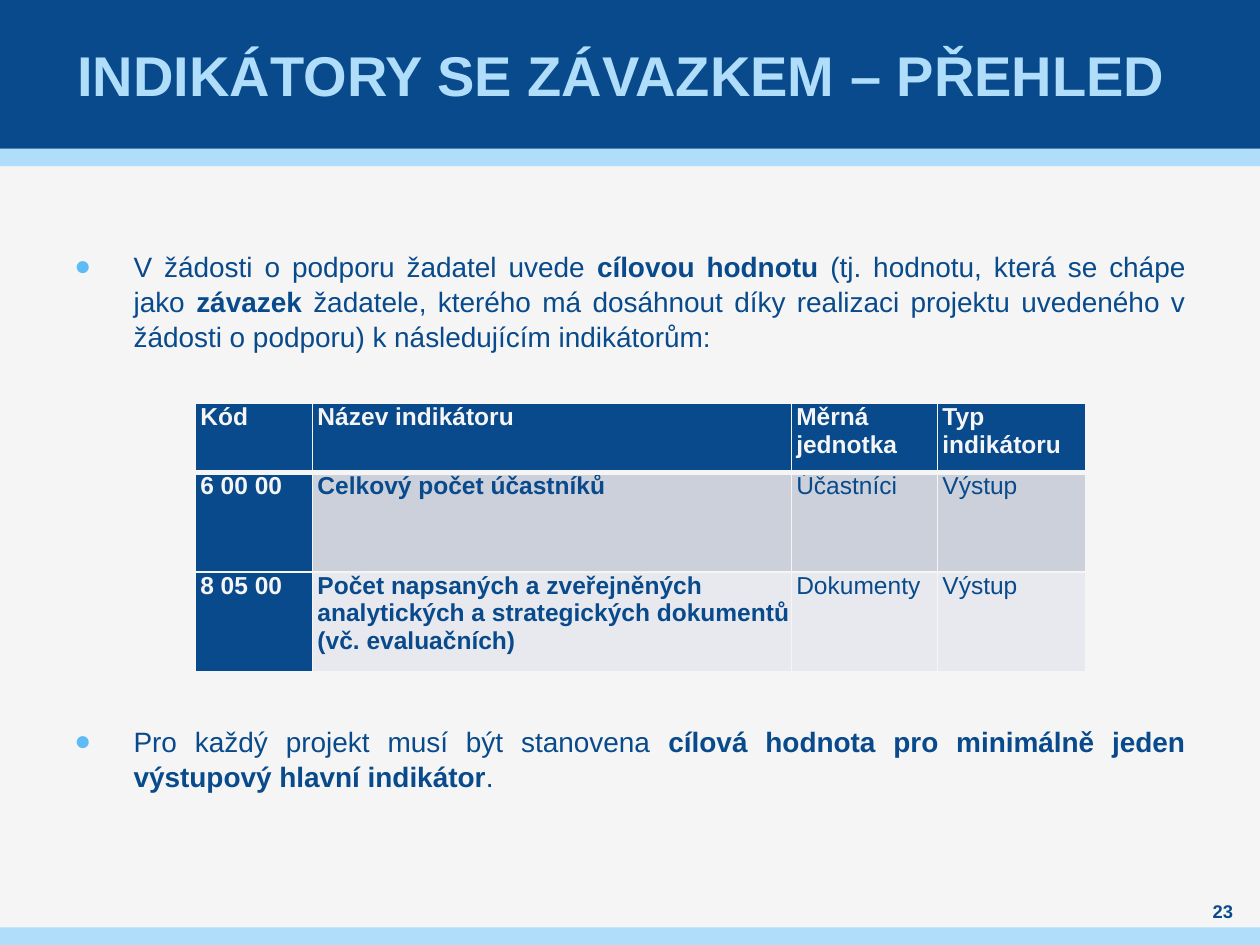
from lxml.etree import SubElement
from pptx import Presentation
from pptx.dml.color import RGBColor
from pptx.enum.shapes import MSO_SHAPE
from pptx.enum.text import MSO_ANCHOR, PP_ALIGN
from pptx.oxml.ns import qn
from pptx.util import Inches, Pt

COLORS = {
    "navy": "084A8B",
    "sky": "AFDDFA",
    "bullet": "5FBBF5",
    "paper": "F5F5F5",
    "band_dark": "CCD0DA",
    "band_light": "E7E9EE",
}


class SlideBuilder:
    font_name = "Arial"

    def __init__(self, slide):
        self.slide = slide

    def color(self, name):
        return RGBColor.from_string(COLORS[name])

    def background(self, name):
        fill = self.slide.background.fill
        fill.solid()
        fill.fore_color.rgb = self.color(name)

    def band(self, top, height, name):
        band = self.slide.shapes.add_shape(
            MSO_SHAPE.RECTANGLE, 0, Inches(top), Inches(10), Inches(height))
        band.shadow.inherit = False
        band.fill.solid()
        band.fill.fore_color.rgb = self.color(name)
        band.line.fill.background()

    def style(self, run, size, name, bold):
        run.font.name = self.font_name
        run.font.size = Pt(size)
        run.font.bold = bold
        run.font.color.rgb = self.color(name)

    def frame(self, left, top, width, height, anchor, side_margin=0):
        box = self.slide.shapes.add_textbox(*map(Inches, (left, top, width, height)))
        frame = box.text_frame
        frame.word_wrap = True
        frame.vertical_anchor = anchor
        frame.margin_left = frame.margin_right = Inches(side_margin)
        frame.margin_top = frame.margin_bottom = 0
        return frame

    def label(self, text, left, top, width, height, size, name, side_margin=0):
        frame = self.frame(left, top, width, height, MSO_ANCHOR.MIDDLE, side_margin)
        frame.text = text
        paragraph = frame.paragraphs[0]
        paragraph.alignment = PP_ALIGN.CENTER
        self.style(paragraph.runs[0], size, name, True)

    def bullet(self, text, top, height):
        frame = self.frame(0.59, top, 8.82, height, MSO_ANCHOR.TOP)
        paragraph = frame.paragraphs[0]
        paragraph.alignment = PP_ALIGN.JUSTIFY
        paragraph.line_spacing = 1.04
        properties = paragraph._p.get_or_add_pPr()
        properties.set("marL", str(Inches(0.47)))
        properties.set("indent", str(-Inches(0.47)))
        bullet_color = SubElement(properties, qn("a:buClr"))
        SubElement(bullet_color, qn("a:srgbClr"), val=COLORS["bullet"])
        SubElement(properties, qn("a:buFont"), typeface=self.font_name)
        SubElement(properties, qn("a:buChar"), char="●")
        for index, part in enumerate(text.split("**")):
            run = paragraph.add_run()
            run.text = part
            self.style(run, 16, "navy", index % 2 == 1)

    def cell_borders(self, cell, **widths):
        properties = cell._tc.get_or_add_tcPr()
        for side in "LRTB":
            line = SubElement(properties, qn(f"a:ln{side}"), w=str(Pt(widths.get(side, 1))))
            fill = SubElement(line, qn("a:solidFill"))
            SubElement(fill, qn("a:srgbClr"), val=COLORS["paper"])

    def cell(self, cell, text, fill_name, text_name, bold):
        cell.fill.solid()
        cell.fill.fore_color.rgb = self.color(fill_name)
        cell.margin_left = Inches(0.04)
        cell.margin_right = cell.margin_top = cell.margin_bottom = 0
        cell.text = text
        self.style(cell.text_frame.paragraphs[0].runs[0], 14, text_name, bold)

    def table(self, rows, left, top, widths, heights):
        table = self.slide.shapes.add_table(
            len(rows), len(widths), Inches(left), Inches(top),
            Inches(sum(widths)), Inches(sum(heights))).table
        for column, width in zip(table.columns, widths):
            column.width = Inches(width)
        for row, height in zip(table.rows, heights):
            row.height = Inches(height)
        for r, texts in enumerate(rows):
            for c, text in enumerate(texts):
                cell = table.cell(r, c)
                heading = r == 0 or c == 0
                band_name = "band_dark" if r % 2 else "band_light"
                self.cell_borders(cell, T=3 if r == 1 else 1, B=3 if r == 0 else 1)
                self.cell(cell, text, "navy" if heading else band_name,
                          "paper" if heading else "navy", heading or c == 1)


def main():
    presentation = Presentation()
    presentation.slide_width = Inches(10)
    presentation.slide_height = Inches(7.5)
    builder = SlideBuilder(presentation.slides.add_slide(presentation.slide_layouts[6]))

    builder.background("paper")
    for top, height, name in ((1.18, 0.14, "sky"), (0, 1.18, "navy"), (7.36, 0.14, "sky")):
        builder.band(top, height, name)
    builder.label("INDIKÁTORY SE ZÁVAZKEM – PŘEHLED ", 0.39, 0, 9.21, 1.18, 32, "sky", 0.04)

    builder.bullet(
        "V žádosti o podporu žadatel uvede **cílovou hodnotu **(tj. hodnotu, která se chápe "
        "jako **závazek** žadatele, kterého má dosáhnout díky realizaci projektu uvedeného "
        "v žádosti o podporu) k následujícím indikátorům:", 1.97, 0.8)
    builder.bullet(
        "Pro každý projekt musí být stanovena **cílová hodnota pro minimálně jeden "
        "výstupový hlavní indikátor**.", 5.74, 0.54)

    indicators = [
        ("Kód", "Název indikátoru", "Měrná jednotka", "Typ indikátoru"),
        ("6 00 00", "Celkový počet účastníků", "Účastníci", "Výstup"),
        ("8 05 00", "Počet napsaných a zveřejněných analytických a strategických "
         "dokumentů (vč. evaluačních)", "Dokumenty", "Výstup"),
    ]
    builder.table(indicators, 1.55, 3.2, (0.93, 3.8, 1.16, 1.18), (0.55, 0.79, 0.79))
    builder.label("23", 9.45, 7.13, 0.51, 0.2, 10.5, "navy")

    presentation.save("out.pptx")


if __name__ == "__main__":
    main()
